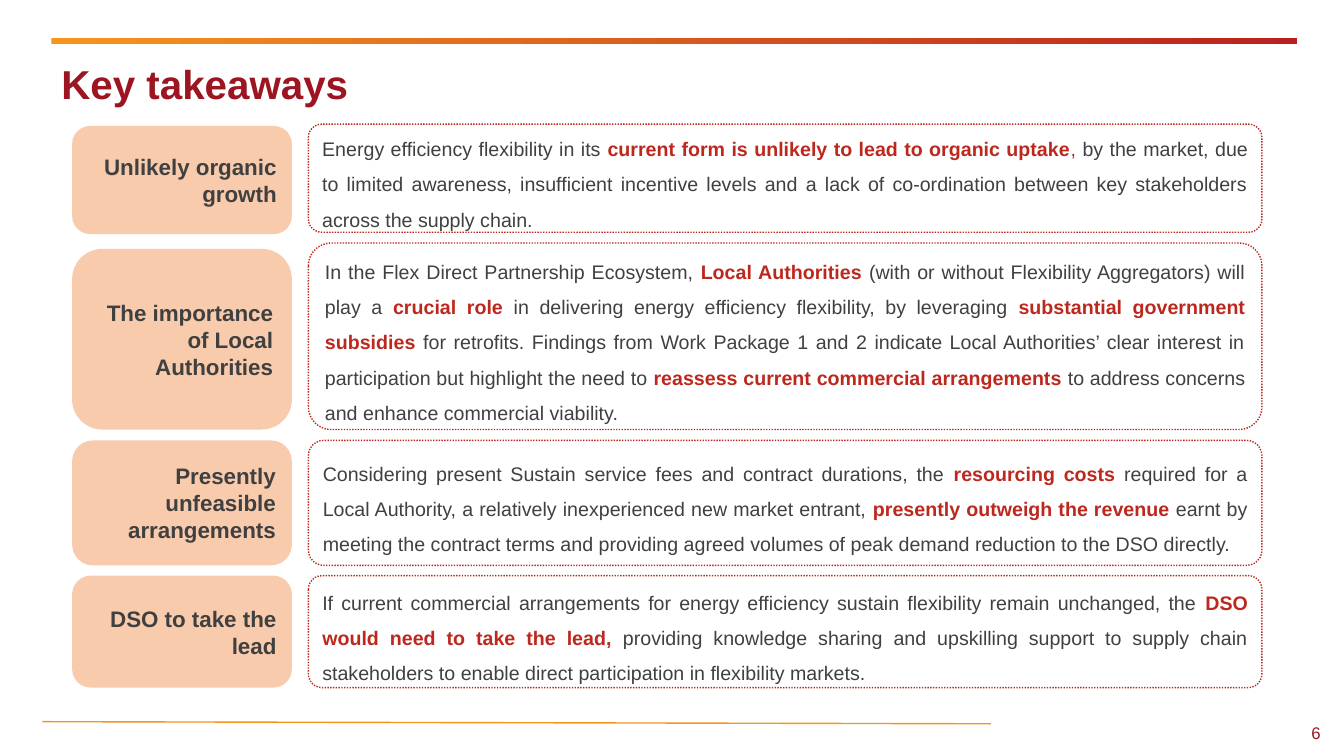
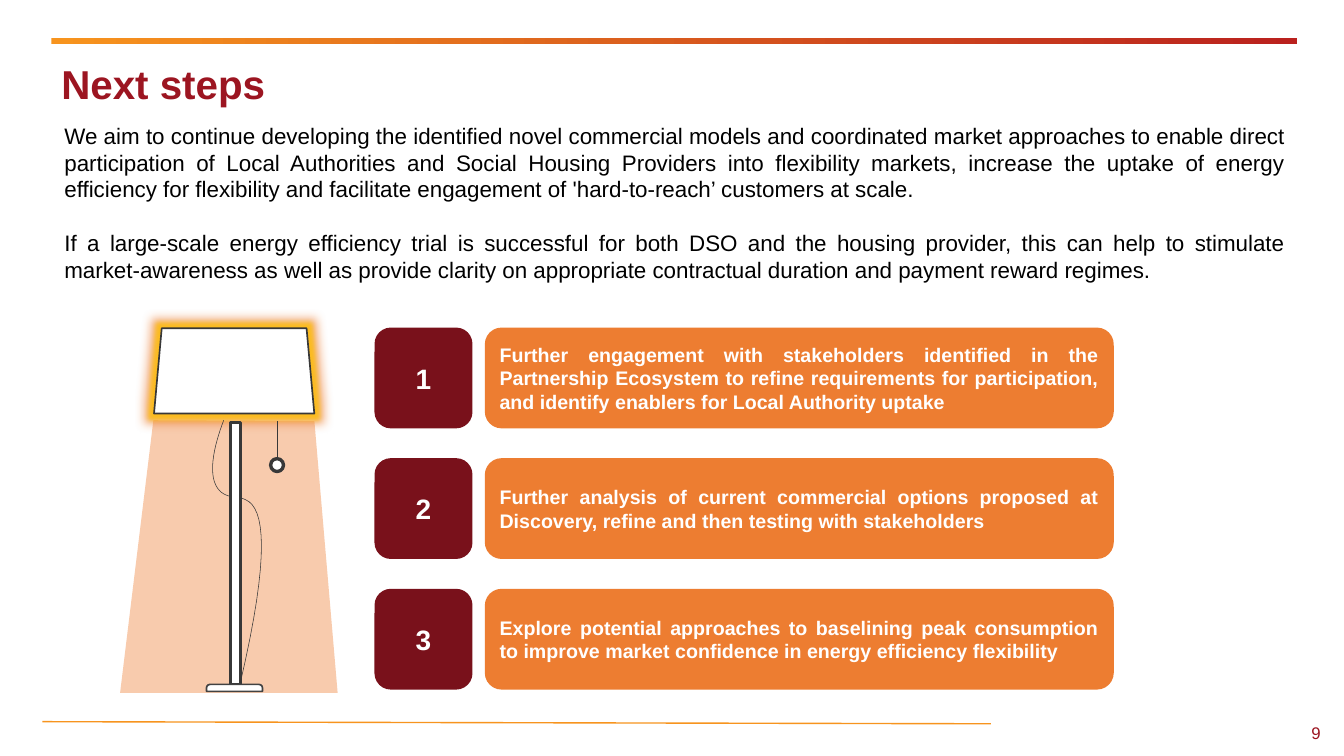
import pptx
import pptx.util
import pptx.dml.color
import pptx.enum.dml
import pptx.enum.shapes
import pptx.enum.text
import pptx.oxml.ns
from dataclasses import dataclass
from lxml import etree

Pt = pptx.util.Pt
RGB = pptx.dml.color.RGBColor.from_string
SHAPE = pptx.enum.shapes.MSO_SHAPE
ALIGN = pptx.enum.text.PP_ALIGN
ANCHOR = pptx.enum.text.MSO_ANCHOR
qn = pptx.oxml.ns.qn


@dataclass(frozen=True)
class TextStyle:
    size: float
    color: str
    bold: bool = False


class Theme:
    font = "Arial"
    orange = "F7941E"
    red = "BA211E"
    outline = "BD281E"
    peach = "F8CBAD"
    maroon = "79111B"
    card = "ED7D31"
    glow = "FFC000"
    white = "FFFFFF"
    ink = "383838"
    foot = "424242"
    title = TextStyle(28.8, "9C1521", True)
    page = TextStyle(12, "9C1521")
    label = TextStyle(16, "404040", True)
    body = TextStyle(14, "404040")
    strong = TextStyle(14, "BD281E", True)
    accent = TextStyle(14, "BD281E")
    intro = TextStyle(16, "000000")
    number = TextStyle(20, "FFFFFF", True)
    step = TextStyle(14, "FFFFFF", True)


class Deck:
    def __init__(self, theme):
        self.theme = theme
        self.prs = pptx.Presentation()
        self.prs.slide_width = Pt(960)
        self.prs.slide_height = Pt(540)
        self.s = None

    def slide(self, title, page):
        t = self.theme
        self.s = self.prs.slides.add_slide(self.prs.slide_layouts[6])
        band = self.shape(SHAPE.RECTANGLE, (36.7, 27.4, 890, 3.8))
        band.fill.gradient()
        band.fill.gradient_angle = 0
        for stop, color in zip(band.fill.gradient_stops, (t.orange, t.red)):
            stop.color.rgb = RGB(color)
        self.line((30.2, 515.5), (707.8, 517), t.orange, 1)
        self.box((846.7, 512.6, 103.7, 21.6), [[(page, t.page)]], ALIGN.RIGHT)
        self.box((36.7, 41.8, 857.5, 40.3), [[(title, t.title)]],
                 anchor=ANCHOR.MIDDLE, spacing=0.9)

    def paint(self, sp, fill=None, line=None, width=1):
        sp.shadow.inherit = False
        if fill:
            sp.fill.solid()
            sp.fill.fore_color.rgb = RGB(fill)
        else:
            sp.fill.background()
        if line:
            sp.line.color.rgb = RGB(line)
            sp.line.width = Pt(width)
        else:
            sp.line.fill.background()
        return sp

    def shape(self, kind, at, fill=None, line=None, width=1):
        sp = self.s.shapes.add_shape(kind, *map(Pt, at))
        return self.paint(sp, fill, line, width)

    def outline(self, points, fill=None, line=None, width=1, close=True):
        pts = [(Pt(x), Pt(y)) for x, y in points]
        builder = self.s.shapes.build_freeform(*pts[0])
        builder.add_line_segments(pts[1:], close=close)
        return self.paint(builder.convert_to_shape(), fill, line, width)

    def line(self, start, end, color, width):
        ends = map(Pt, (*start, *end))
        c = self.s.shapes.add_connector(
            pptx.enum.shapes.MSO_CONNECTOR.STRAIGHT, *ends)
        c.line.color.rgb = RGB(color)
        c.line.width = Pt(width)
        etree.SubElement(c._element.spPr, qn("a:effectLst"))
        return c

    def glow(self, sp, radius, color, alpha):
        effects = sp._element.spPr.find(qn("a:effectLst"))
        glow = etree.SubElement(effects, qn("a:glow"), rad=str(Pt(radius)))
        clr = etree.SubElement(glow, qn("a:srgbClr"), val=color)
        etree.SubElement(clr, qn("a:alpha"), val=str(alpha * 1000))

    def text(self, sp, paragraphs, align, anchor, spacing=None, gap=0):
        tf = sp.text_frame
        tf.word_wrap = True
        tf.vertical_anchor = anchor
        for i, runs in enumerate(paragraphs):
            p = tf.add_paragraph() if i else tf.paragraphs[0]
            p.alignment = align
            if spacing:
                p.line_spacing = spacing
            if i and gap:
                p.space_before = Pt(gap)
            for words, style in runs:
                r = p.add_run()
                r.text = words
                r.font.name = self.theme.font
                r.font.size = Pt(style.size)
                r.font.bold = style.bold
                r.font.color.rgb = RGB(style.color)

    def box(self, at, paragraphs, align=ALIGN.LEFT, anchor=ANCHOR.TOP,
            spacing=None, gap=0):
        sp = self.s.shapes.add_textbox(*map(Pt, at))
        self.text(sp, paragraphs, align, anchor, spacing, gap)

    def card(self, at, fill, runs, align):
        sp = self.shape(SHAPE.ROUNDED_RECTANGLE, at, fill)
        self.text(sp, [runs], align, ANCHOR.MIDDLE)

    def panel(self, at, runs):
        sp = self.shape(SHAPE.ROUNDED_RECTANGLE, at, line=self.theme.outline)
        sp.adjustments[0] = 0.122
        sp.line.dash_style = pptx.enum.dml.MSO_LINE.ROUND_DOT
        self.text(sp, [runs], ALIGN.JUSTIFY, ANCHOR.MIDDLE, 1.5)

    def lamp(self):
        t = self.theme
        shade = [(224.5, 295.4), (110, 295.4), (115.5, 234.5), (219, 234.5)]
        self.outline([(224.6, 300.8), (109.6, 300.2), (85.8, 495), (241.2, 495)],
                     t.peach)
        halo = self.outline(shade, t.white)
        self.glow(halo, 14, t.card, 60)
        lit = self.outline(shade, t.white, t.ink, 1.2)
        self.glow(lit, 7, t.glow, 75)
        cord = curve((159.8, 300.2), (152.6, 319), (147.6, 341.3), (157, 350.6))
        cord += curve((157, 350.6), (162.7, 356.4), (170.6, 354.2), (175.7, 357.1))
        cord += curve((175.7, 357.1), (188.6, 362.9), (193.7, 393.8), (171.4, 488.9))
        self.outline(cord, line=t.ink, width=0.4, close=False)
        self.line((198, 301), (198, 327.6), t.ink, 0.4)
        self.shape(SHAPE.RECTANGLE, (164.7, 301.7, 7, 187.6), t.white, t.ink, 2.4)
        foot = self.shape(SHAPE.ROUND_2_SAME_RECTANGLE, (147.5, 488.9, 40, 5),
                          t.white, t.foot, 1.2)
        foot.adjustments[0] = 0.5
        self.shape(SHAPE.OVAL, (193.3, 327.6, 9.2, 9.2), t.white, t.ink, 2.4)


def curve(a, b, c, d, steps=16):
    points = []
    for i in range(steps + 1):
        u = i / steps
        weights = ((1 - u) ** 3, 3 * u * (1 - u) ** 2, 3 * u * u * (1 - u), u ** 3)
        points.append(tuple(sum(w * q[k] for w, q in zip(weights, (a, b, c, d)))
                            for k in (0, 1)))
    return points


def takeaways(deck):
    t = deck.theme
    rows = [
        ("Unlikely organic growth", (90, 77.2), (88.7, 77.2), [
            ("Energy efficiency flexibility in its ", t.body),
            ("current form is unlikely to lead to organic uptake", t.strong),
            (", ", t.accent),
            ("by the market, due to limited awareness, insufficient incentive "
             "levels and a lack of co-ordination between key stakeholders "
             "across the supply chain.", t.body)]),
        ("The importance of Local Authorities", (177.8, 129), (173.6, 133.2), [
            ("In the Flex Direct Partnership Ecosystem, ", t.body),
            ("Local Authorities ", t.strong),
            ("(with or without Flexibility Aggregators) will play a ", t.body),
            ("crucial role ", t.strong),
            ("in delivering energy efficiency flexibility, by leveraging ", t.body),
            ("substantial government subsidies ", t.strong),
            ("for retrofits. Findings from Work Package 1 and 2 indicate Local "
             "Authorities’ clear interest in participation but highlight the "
             "need to ", t.body),
            ("reassess current commercial arrangements ", t.strong),
            ("to address concerns and enhance commercial viability.", t.body)]),
        ("Presently unfeasible arrangements", (314.6, 89.3), (314.6, 89.3), [
            ("Considering present Sustain service fees and contract durations, "
             "the ", t.body),
            ("resourcing costs ", t.strong),
            ("required for a Local Authority, a relatively inexperienced new "
             "market entrant, ", t.body),
            ("presently outweigh the revenue ", t.strong),
            ("earnt by meeting the contract terms and providing agreed volumes "
             "of peak demand reduction to the DSO directly.", t.body)]),
        ("DSO to take the lead", (411.2, 80), (411.2, 80), [
            ("If current commercial arrangements for energy efficiency sustain "
             "flexibility remain unchanged, the ", t.body),
            ("DSO would need to take the lead, ", t.strong),
            ("providing knowledge sharing and upskilling support to supply "
             "chain stakeholders to enable direct participation in flexibility "
             "markets.", t.body)]),
    ]
    deck.slide("Key takeaways", "6")
    for label, (y, h), (panel_y, panel_h), runs in rows:
        deck.card((51.5, y, 157, h), t.peach, [(label, t.label)], ALIGN.RIGHT)
        deck.panel((220.3, panel_y, 681.1, panel_h), runs)


def next_steps(deck):
    t = deck.theme
    intro = [
        "We aim to continue developing the identified novel commercial models "
        "and coordinated market approaches to enable direct participation of "
        "Local Authorities and Social Housing Providers into flexibility "
        "markets, increase the uptake of energy efficiency for flexibility and "
        "facilitate engagement of 'hard-to-reach’ customers at scale.",
        "If a large-scale energy efficiency trial is successful for both DSO "
        "and the housing provider, this can help to stimulate market-awareness "
        "as well as provide clarity on appropriate contractual duration and "
        "payment reward regimes.",
    ]
    steps = [
        "Further engagement with stakeholders identified in the Partnership "
        "Ecosystem to refine requirements for participation, and identify "
        "enablers for Local Authority uptake",
        "Further analysis of current commercial options proposed at Discovery, "
        "refine and then testing with stakeholders",
        "Explore potential approaches to baselining peak consumption to improve "
        "market confidence in energy efficiency flexibility",
    ]
    deck.slide("Next steps", "9")
    deck.box((38.9, 83.5, 886.3, 125), [[(words, t.intro)] for words in intro],
             ALIGN.JUSTIFY, gap=19)
    deck.lamp()
    for i, words in enumerate(steps):
        y = 234 + 93.3 * i
        deck.card((267.5, y, 70, 72), t.maroon, [(str(i + 1), t.number)],
                  ALIGN.CENTER)
        deck.card((346.3, y, 449.3, 72), t.card, [(words, t.step)],
                  ALIGN.JUSTIFY)


def main():
    deck = Deck(Theme())
    takeaways(deck)
    next_steps(deck)
    deck.prs.save("out.pptx")


if __name__ == "__main__":
    main()
